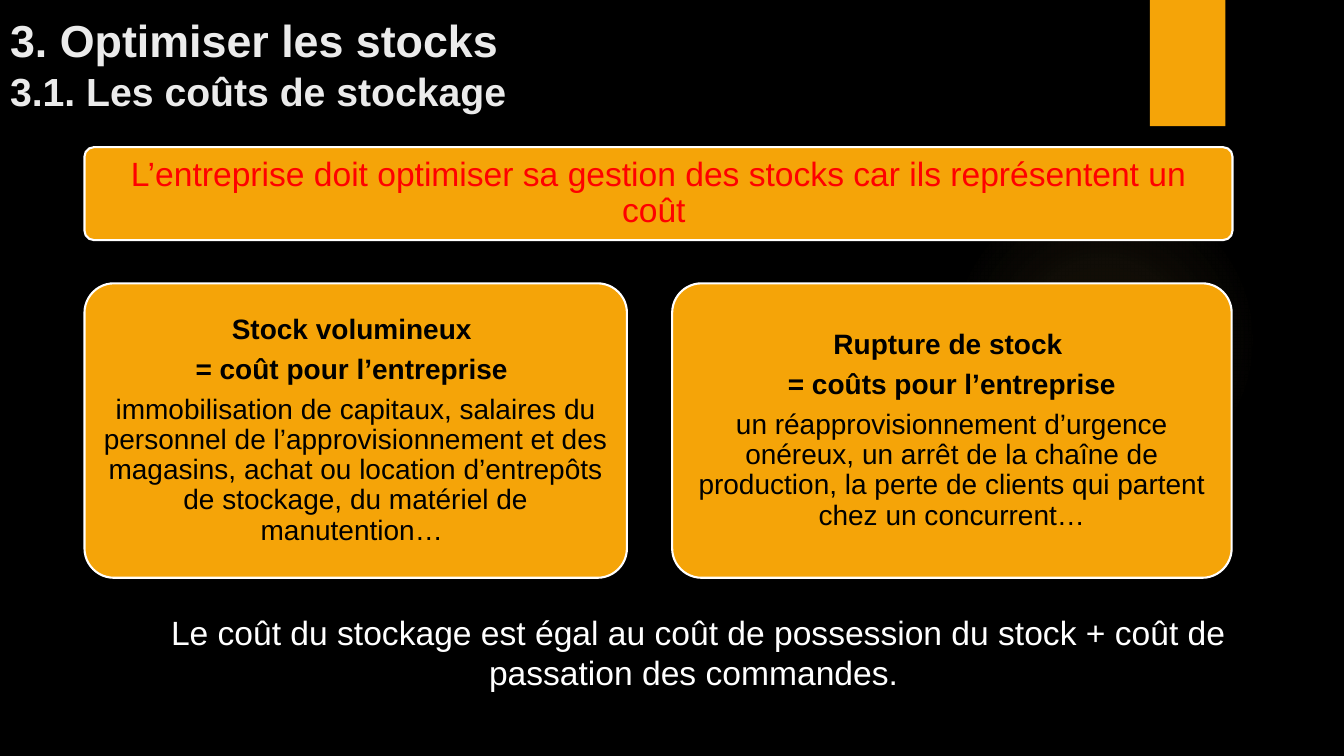
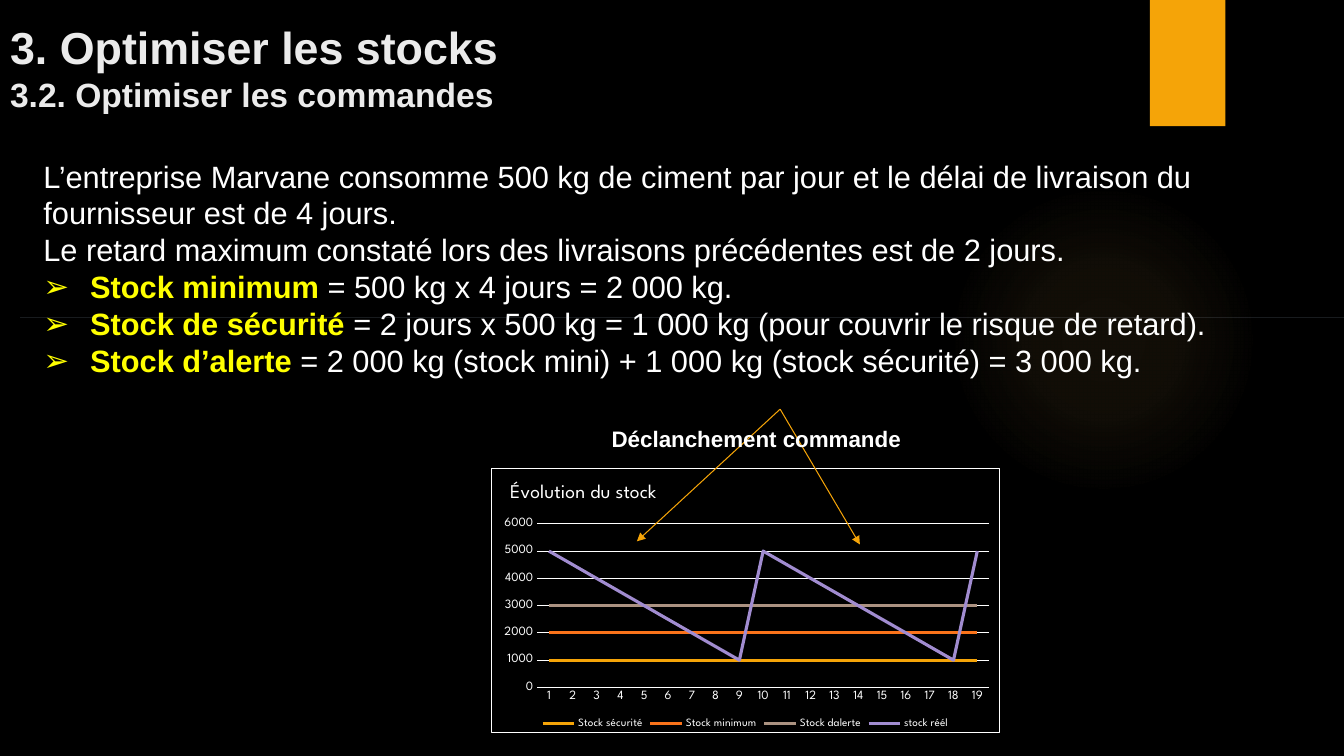
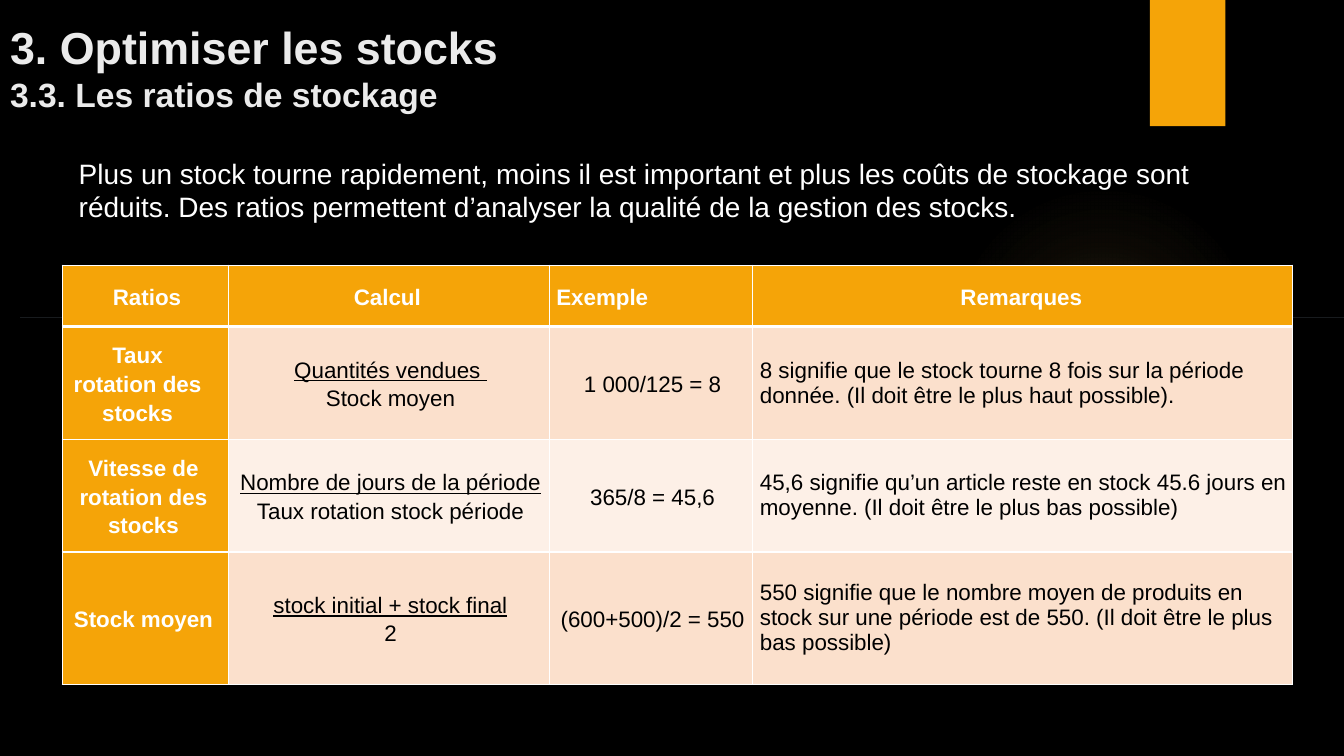
from pptx import Presentation, oxml
from pptx import util as u
from pptx.chart.data import CategoryChartData
from pptx.dml.color import RGBColor
from pptx.enum import chart as charts, shapes, text
from pptx.oxml.ns import nsdecls, qn

AMBER, WHITE, BLACK, YELLOW = "F5A408", "FFFFFF", "000000", "FFFF00"
SLIDE_SIZE = (33.87, 19.05)
LEFT, CENTER = text.PP_ALIGN.LEFT, text.PP_ALIGN.CENTER
TOP, MIDDLE, BOTTOM = text.MSO_ANCHOR.TOP, text.MSO_ANCHOR.MIDDLE, text.MSO_ANCHOR.BOTTOM

CHAPTER = "3. Optimiser les stocks"
STRONG = {"bold": True}
KEYWORD = {"bold": True, "color": YELLOW}
UNDERLINED = {"underline": True}

COSTS = {
    "title": ("3.1. Les coûts de stockage", 28),
    "body": [[("Le coût du stockage est égal au coût de possession du stock + coût de passation des commandes. ", {})]],
    "cards": [
        ((2.13, 3.71, 28.93, 2.34), 0.25, {"size": 24, "color": "FF0000"}, [
            [("L’entreprise doit optimiser sa gestion des stocks car ils représentent un coût ", {})]]),
        ((2.13, 7.14, 13.67, 7.42), 0.2, {"size": 20, "color": BLACK}, [
            [("Stock volumineux ", STRONG)],
            [("= coût pour l’entreprise ", STRONG)],
            [("immobilisation de capitaux, salaires du personnel de l’approvisionnement et des magasins, "
              "achat ou location d’entrepôts de stockage, du matériel de manutention… ", {})]]),
        ((16.94, 7.14, 14.1, 7.42), 0.2, {"size": 20, "color": BLACK}, [
            [("Rupture de stock ", STRONG)],
            [("= coûts pour l’entreprise", STRONG)],
            [("un réapprovisionnement d’urgence onéreux, un arrêt de la chaîne de production, "
              "la perte de clients qui partent chez un concurrent…", {})]]),
    ],
}

ORDERS = {
    "title": ("3.2. Optimiser les commandes", 24),
    "body": [
        [("L’entreprise Marvane consomme 500 kg de ciment par jour et le délai de livraison du "
          "fournisseur est de 4 jours.", {})],
        [("Le retard maximum constaté lors des livraisons précédentes est de 2 jours.", {})],
        [("Stock minimum ", KEYWORD), ("= 500 kg x 4 jours = 2 000 kg.", {})],
        [("Stock de sécurité ", KEYWORD),
         ("= 2 jours x 500 kg = 1 000 kg (pour couvrir le risque de retard).", {})],
        [("Stock d’alerte ", KEYWORD),
         ("= 2 000 kg (stock mini) + 1 000 kg (stock sécurité) = 3 000 kg.", {})],
    ],
    "label": "Déclanchement commande",
    "arrow_start": (19.66, 10.31),
    "arrow_ends": [(16.05, 13.64), (21.67, 13.72)],
}

DAYS = 19
CONSUMPTION = list(range(5000, 999, -500))
STOCK_TITLE = "Évolution du stock"
STOCK_SERIES = [
    ("Stock sécurité", AMBER, [1000] * DAYS),
    ("Stock minimum", "FA731A", [2000] * DAYS),
    ("Stock dalerte", "AB9281", [3000] * DAYS),
    ("stock réél", "A18CD0", CONSUMPTION * 2 + CONSUMPTION[:1]),
]

RATIOS = {
    "title": ("3.3. Les ratios de stockage", 24),
    "body": [[("Plus un stock tourne rapidement, moins il est important et plus les coûts de stockage sont "
               "réduits. Des ratios permettent d’analyser la qualité de la gestion des stocks.", {})]],
    "columns": [4.19, 8.08, 5.13, 13.61],
    "heights": [1.55, 2.84, 2.84, 3.33],
    "name_insets": [0.1, 0.58, 0.28, 0.28],
    "rows": [
        ("Ratios", ("Calcul ",), "Exemple", "Remarques "),
        ("Taux rotation des stocks", ("Quantités vendues ", "Stock moyen"), "1 000/125 = 8",
         "8 signifie que le stock tourne 8 fois sur la période donnée. (Il doit être le plus haut possible)."),
        ("Vitesse de rotation des stocks", ("Nombre de jours de la période", "Taux rotation stock période"),
         "365/8 = 45,6",
         "45,6 signifie qu’un article reste en stock 45.6 jours en moyenne. (Il doit être le plus bas possible)"),
        ("Stock moyen", ("stock initial + stock final", "2"), "(600+500)/2 = 550",
         "550 signifie que le nombre moyen de produits en stock sur une période est de 550. "
         "(Il doit être le plus bas possible)"),
    ],
}


def rgb(value):
    return RGBColor.from_string(value)


def cm(values):
    return [u.Cm(value) for value in values]


def xml(markup):
    prefix, rest = markup.split(" ", 1) if " " in markup.split(">")[0] else (markup.split(">")[0], None)
    head = prefix.rstrip("/")
    return oxml.parse_xml(markup.replace(head, f"{head} {nsdecls('a', 'c')}", 1))


def apply(target, values):
    for name, value in values.items():
        setattr(target, name, value)


def style(font, size=None, color=None, name="Arial", **extra):
    apply(font, {"name": name, **extra})
    if size:
        font.size = u.Pt(size)
    if color:
        font.color.rgb = rgb(color)


def place(shape, box):
    apply(shape, dict(zip(("left", "top", "width", "height"), cm(box))))


def write(frame, paras, look, layout):
    for index, spans in enumerate(paras):
        para = frame.paragraphs[0] if index == 0 else frame.add_paragraph()
        apply(para, layout)
        for content, changes in spans:
            span = para.add_run()
            span.text = content
            style(span.font, **{**look, **changes})


def set_bullet(para, char=None):
    props = para._p.get_or_add_pPr()
    indent = u.Cm(1.18) if char else 0
    props.set("marL", str(indent))
    props.set("indent", str(-indent))
    props.append(xml(f'<a:buChar char="{char}"/>' if char else "<a:buNone/>"))


def add_block(page, kind, box, fill):
    shape = page.shapes.add_shape(kind, *cm(box))
    shape.shadow.inherit = False
    shape.fill.solid()
    shape.fill.fore_color.rgb = rgb(fill)
    shape.line.fill.background()
    return shape


def build_backdrop(deck, page):
    master = deck.slide_master
    master.background.fill.solid()
    master.background.fill.fore_color.rgb = rgb(BLACK)
    glow = add_block(page, shapes.MSO_SHAPE.OVAL, (23.9, 4.65, 7.82, 7.82), "FAC96A")
    stops = "".join(
        f'<a:gs pos="{position * 1000}"><a:srgbClr val="FAC96A"><a:alpha val="{alpha * 1000}"/></a:srgbClr></a:gs>'
        for position, alpha in ((0, 7), (36, 6), (69, 0)))
    gradient = xml(
        f'<a:gradFill rotWithShape="1"><a:gsLst>{stops}</a:gsLst><a:path path="circle">'
        '<a:fillToRect l="50000" t="50000" r="50000" b="50000"/></a:path></a:gradFill>')
    props = glow.element.spPr
    props.replace(props.find(qn("a:solidFill")), gradient)
    tab = add_block(page, shapes.MSO_SHAPE.RECTANGLE, (28.98, 0, 1.9, 3.18), AMBER)
    for shape in (glow, tab):
        master.shapes.element.append(shape.element)


def add_page(deck, content, body_box, size, anchor=TOP, layout=None, bulleted_from=99):
    page = deck.slides.add_slide(deck.slide_layouts[1])
    title, body = page.placeholders
    for shape, box, edge in ((title, (0, 0, 24.5, 3), BOTTOM), (body, body_box, anchor)):
        place(shape, box)
        apply(shape.text_frame, {"vertical_anchor": edge, "word_wrap": True,
                                 "auto_size": text.MSO_AUTO_SIZE.NONE})
    section, section_size = content["title"]
    look = {"color": "EBEBEB", "bold": True}
    frame = title.text_frame
    write(frame, [[(CHAPTER, {"size": 32})]], look, {"alignment": LEFT})
    frame.paragraphs[0].add_line_break()
    span = frame.paragraphs[0].add_run()
    span.text = section
    style(span.font, size=section_size, **look)
    write(body.text_frame, content["body"], {"size": size, "color": WHITE}, {})
    for index, para in enumerate(body.text_frame.paragraphs):
        set_bullet(para, "➢" if index >= bulleted_from else None)
        apply(para, {"space_before": u.Pt(0), **(layout or {})})
    return page


def add_rule(page):
    add_block(page, shapes.MSO_SHAPE.RECTANGLE, (0.51, 8, SLIDE_SIZE[0] - 0.51, 0), "C6D9F1")


def add_card(page, box, inset, look, paras):
    card = add_block(page, shapes.MSO_SHAPE.ROUNDED_RECTANGLE, box, AMBER)
    card.adjustments[0] = 0.1
    card.line.color.rgb = rgb(WHITE)
    card.line.width = u.Pt(1.5)
    frame = card.text_frame
    apply(frame, {"word_wrap": True, "vertical_anchor": MIDDLE})
    apply(frame, {f"margin_{side}": u.Cm(inset) for side in ("left", "right", "top", "bottom")})
    write(frame, paras, look,
          {"alignment": CENTER, "line_spacing": 0.9, "space_after": u.Pt(look["size"] * 0.35)})


def add_arrow(page, start, end):
    arrow = page.shapes.add_connector(shapes.MSO_CONNECTOR.STRAIGHT, *cm(start + end))
    arrow.line.color.rgb = rgb(AMBER)
    arrow.line.width = u.Pt(0.75)
    arrow.line._get_or_add_ln().append(xml('<a:tailEnd type="triangle"/>'))
    arrow.element.spPr.append(xml("<a:effectLst/>"))


def set_layout(parent, position, **values):
    for old in parent.findall(qn("c:layout")):
        parent.remove(old)
    target = '<c:layoutTarget val="inner"/>' if "w" in values else ""
    modes = "".join(f'<c:{name}Mode val="edge"/>' for name in ("x", "y"))
    sizes = "".join(f'<c:{name} val="{value}"/>' for name, value in values.items())
    parent.insert(position, xml(f"<c:layout><c:manualLayout>{target}{modes}{sizes}</c:manualLayout></c:layout>"))


def add_stock_chart(page, box):
    data = CategoryChartData()
    data.categories = [str(day) for day in range(1, DAYS + 1)]
    for name, _, values in STOCK_SERIES:
        data.add_series(name, values)
    chart = page.shapes.add_chart(charts.XL_CHART_TYPE.LINE, *cm(box), data).chart
    look = {"name": "League Spartan", "color": WHITE, "bold": False}
    style(chart.font, size=10, **look)
    chart.has_title = True
    write(chart.chart_title.text_frame, [[(STOCK_TITLE, {})]], {"size": 14, **look}, {})
    set_layout(chart.chart_title._element, 1, x=0.03, y=0.04)
    set_layout(chart._chartSpace.chart.plotArea, 0, x=0.09, y=0.21, w=0.89, h=0.62)
    chart.has_legend = True
    apply(chart.legend, {"position": charts.XL_LEGEND_POSITION.BOTTOM, "include_in_layout": False})
    style(chart.legend.font, size=8, **look)
    for axis in (chart.category_axis, chart.value_axis):
        apply(axis, {"major_tick_mark": charts.XL_TICK_MARK.NONE, "minor_tick_mark": charts.XL_TICK_MARK.NONE})
        style(axis.tick_labels.font, size=9, **look)
    values = chart.value_axis
    apply(values, {"minimum_scale": 0, "maximum_scale": 6000, "major_unit": 1000, "has_major_gridlines": True})
    values.format.line.fill.background()
    for line in (chart.category_axis.format.line, values.major_gridlines.format.line):
        line.color.rgb = rgb(WHITE)
        line.width = u.Pt(0.75)
    chart.plots[0].vary_by_categories = False
    for series, (_, color, _) in zip(chart.plots[0].series, STOCK_SERIES):
        series.smooth = False
        series.format.line.color.rgb = rgb(color)
        series.format.line.width = u.Pt(2.25)
    chart._chartSpace.chart.addnext(xml(
        f'<c:spPr><a:solidFill><a:srgbClr val="{BLACK}"/></a:solidFill><a:ln w="{u.Pt(0.75)}">'
        f'<a:solidFill><a:srgbClr val="{WHITE}"/></a:solidFill></a:ln></c:spPr>'))


def set_borders(cell, bottom, top):
    props = cell._tc.get_or_add_tcPr()
    for index, (side, width) in enumerate((("L", 1), ("R", 1), ("T", top), ("B", bottom))):
        props.insert(index, xml(
            f'<a:ln{side} w="{u.Pt(width)}"><a:solidFill><a:srgbClr val="{WHITE}"/></a:solidFill></a:ln{side}>'))


def add_ratio_table(page, left, top):
    rows, columns, heights = RATIOS["rows"], RATIOS["columns"], RATIOS["heights"]
    box = (left, top, sum(columns), sum(heights))
    table = page.shapes.add_table(len(rows), len(columns), *cm(box)).table
    for column, width in zip(table.columns, columns):
        column.width = u.Cm(width)
    for row, height in zip(table.rows, heights):
        row.height = u.Cm(height)
    for r, row in enumerate(rows):
        for c, content in enumerate(row):
            cell = table.cell(r, c)
            heading = r == 0 or c == 0
            right = RATIOS["name_insets"][r] if c == 0 else 0.1
            apply(cell, {"vertical_anchor": MIDDLE, "margin_left": u.Cm(0.18), "margin_right": u.Cm(right),
                         "margin_top": 0, "margin_bottom": 0})
            cell.fill.solid()
            cell.fill.fore_color.rgb = rgb(AMBER if heading else ("FDF0E7", "FBE0CC")[r % 2])
            set_borders(cell, 3 if r == 0 else 1, 3 if r == 1 else 1)
            lines = content if isinstance(content, tuple) else (content,)
            paras = [[(line, UNDERLINED if len(lines) > 1 and i == 0 else {})] for i, line in enumerate(lines)]
            aligned_left = (c == 2) if r == 0 else (c == 3)
            write(cell.text_frame, paras,
                  {"size": 16, "color": WHITE if heading else BLACK, "bold": heading},
                  {"alignment": LEFT if aligned_left else CENTER,
                   "line_spacing": 1.0 if c == 3 and r else 1.15})
            cell.text_frame.paragraphs[0].space_before = u.Pt(3 if r == 0 or len(lines) > 1 else 0)
            cell.text_frame.paragraphs[-1].space_after = u.Pt(3)


def main():
    deck = Presentation()
    deck.slide_width, deck.slide_height = cm(SLIDE_SIZE)

    page = add_page(deck, COSTS, (2.9, 15.29, 29.39, 2.31), 24,
                    layout={"alignment": CENTER, "space_after": u.Pt(6)})
    build_backdrop(deck, page)
    for card in COSTS["cards"]:
        add_card(page, *card)

    page = add_page(deck, ORDERS, (0.84, 3.81, 31.85, 5.89), 22, anchor=MIDDLE, bulleted_from=2)
    add_stock_chart(page, (12.37, 11.79, 12.83, 6.68))
    for end in ORDERS["arrow_ends"]:
        add_arrow(page, ORDERS["arrow_start"], end)
    label = page.shapes.add_textbox(*cm((15, 10.55, 8.12, 1))).text_frame
    apply(label, {"word_wrap": True, "vertical_anchor": MIDDLE})
    write(label, [[(ORDERS["label"], STRONG)]], {"size": 16, "color": WHITE}, {"alignment": CENTER})
    add_rule(page)

    page = add_page(deck, RATIOS, (1.73, 3.81, 29.26, 1.96), 20, layout={"space_after": u.Pt(6)})
    add_rule(page)
    add_ratio_table(page, 1.57, 6.68)

    deck.save("out.pptx")


if __name__ == "__main__":
    main()
